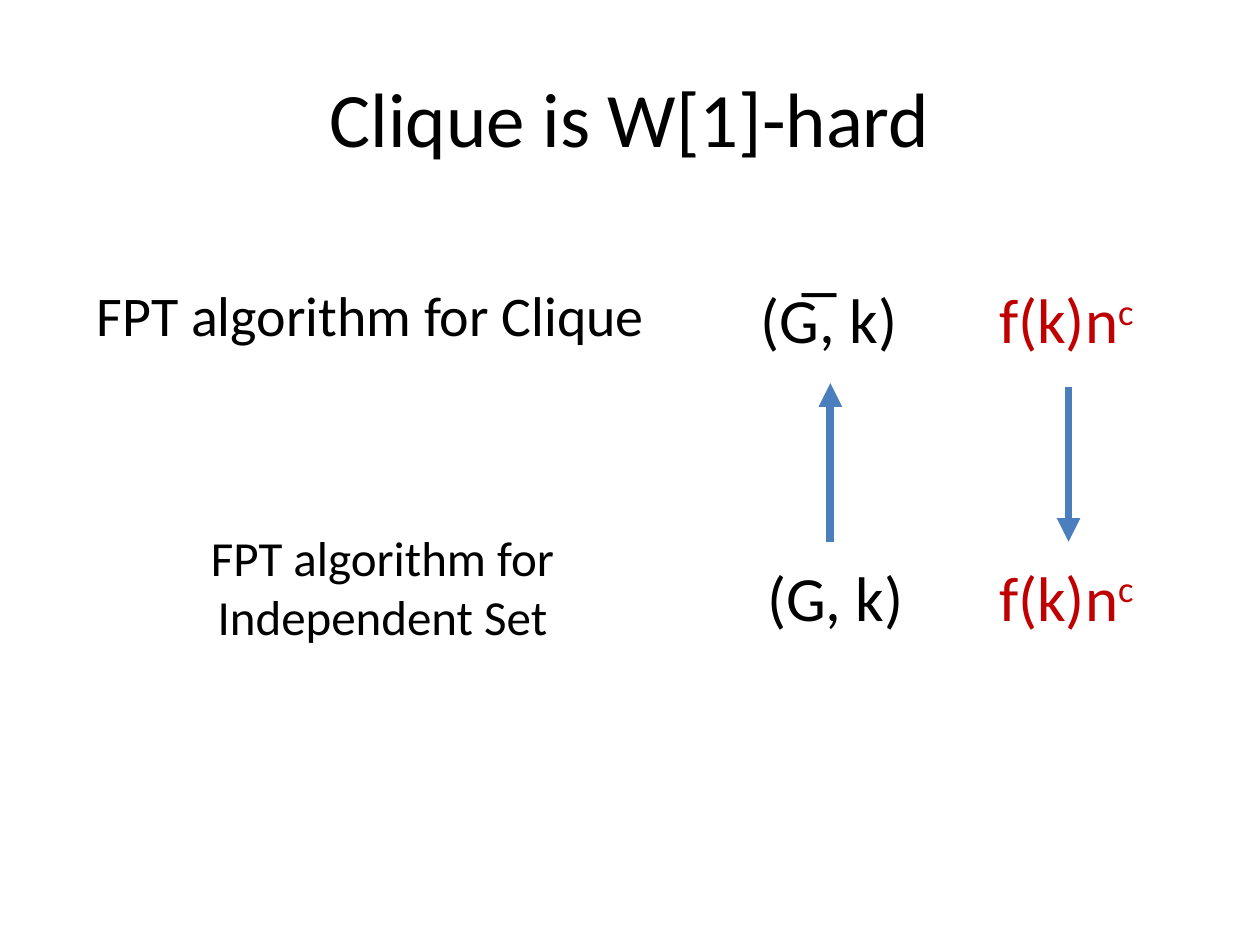
from pptx import Presentation
from pptx.dml.color import RGBColor
from pptx.enum.shapes import MSO_CONNECTOR as Connector
from pptx.enum.text import MSO_ANCHOR as Anchor, MSO_AUTO_SIZE as AutoSize, PP_ALIGN as Align
from pptx.oxml.ns import qn
from pptx.util import Pt
from lxml.etree import SubElement

BLACK, RED, BLUE = "000000", "C00000", "4B7EBC"
FORMULA_WIDTH, FORMULA_HEIGHT = 93.6, 51


def color(hex_string):
    return RGBColor.from_string(hex_string)


def add_text(slide, box, text, size, ink=BLACK, align=Align.LEFT,
             anchor=Anchor.TOP, wrap=True, superscript=""):
    label = slide.shapes.add_textbox(*map(Pt, box))
    frame = label.text_frame
    frame.word_wrap = wrap
    frame.auto_size = AutoSize.NONE if wrap else AutoSize.SHAPE_TO_FIT_TEXT
    frame.vertical_anchor = anchor
    paragraph = frame.paragraphs[0]
    paragraph.alignment = align
    paragraph.font.name = "Calibri"
    paragraph.font.size = Pt(size)
    paragraph.font.color.rgb = color(ink)
    paragraph.add_run().text = text
    if superscript:
        exponent = paragraph.add_run()
        exponent.text = superscript
        exponent.font._element.set("baseline", "30000")


def add_arrow(slide, x, start, end):
    arrow = slide.shapes.add_connector(
        Connector.STRAIGHT, Pt(x), Pt(start), Pt(x), Pt(end))
    arrow.line.color.rgb = color(BLUE)
    arrow.line.width = Pt(4.5)
    SubElement(arrow.line._get_or_add_ln(), qn("a:tailEnd"), type="triangle")
    SubElement(arrow._element.spPr, qn("a:effectLst"))


def add_title(slide, box):
    add_text(slide, box, "Clique is W[1]-hard", 44,
             align=Align.CENTER, anchor=Anchor.MIDDLE)


def add_problems(slide, box):
    left, top, width, height = box
    add_text(slide, (left, top, width, 53), "FPT algorithm for Clique", 32)
    add_text(slide, (left + 17.3, top + height - 108, 306, 108),
             "FPT algorithm for Independent Set", 28, align=Align.CENTER)


def add_reduction(slide, box):
    left, top, width, height = box
    lower = top + height - FORMULA_HEIGHT
    runtime_left = left + width - FORMULA_WIDTH
    instances = [("G̅", left, top), ("G", left + 3.6, lower)]
    for graph, x, y in instances:
        add_text(slide, (x, y, FORMULA_WIDTH, FORMULA_HEIGHT),
                 f"({graph}, k)", 36, wrap=False)
    for y in (top, lower):
        add_text(slide, (runtime_left, y, FORMULA_WIDTH, FORMULA_HEIGHT),
                 "f(k)n", 36, RED, wrap=False, superscript="c")
    arrow_bottom = lower - 5.8
    add_arrow(slide, left + FORMULA_WIDTH / 2, arrow_bottom, top + 62)
    add_arrow(slide, runtime_left + FORMULA_WIDTH / 2, top + 64, arrow_bottom)


def main():
    deck = Presentation()
    deck.slide_width, deck.slide_height = Pt(720), Pt(540)
    slide = deck.slides.add_slide(deck.slide_layouts[6])
    add_title(slide, (36, 21.6, 648, 90))
    add_problems(slide, (48.2, 157, 329, 249))
    add_reduction(slide, (427.7, 157, 229.7, 209.4))
    deck.save("out.pptx")


if __name__ == "__main__":
    main()
